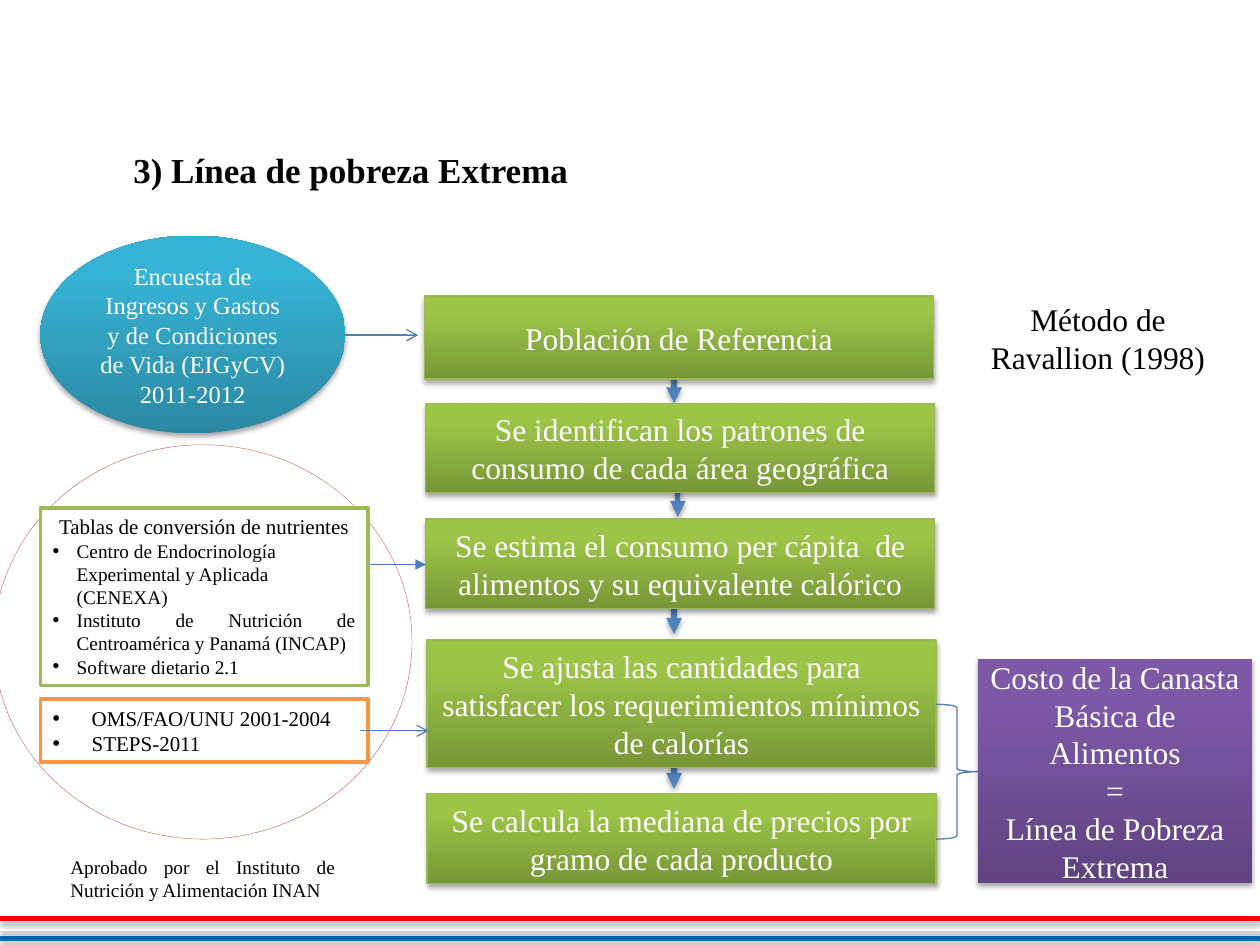
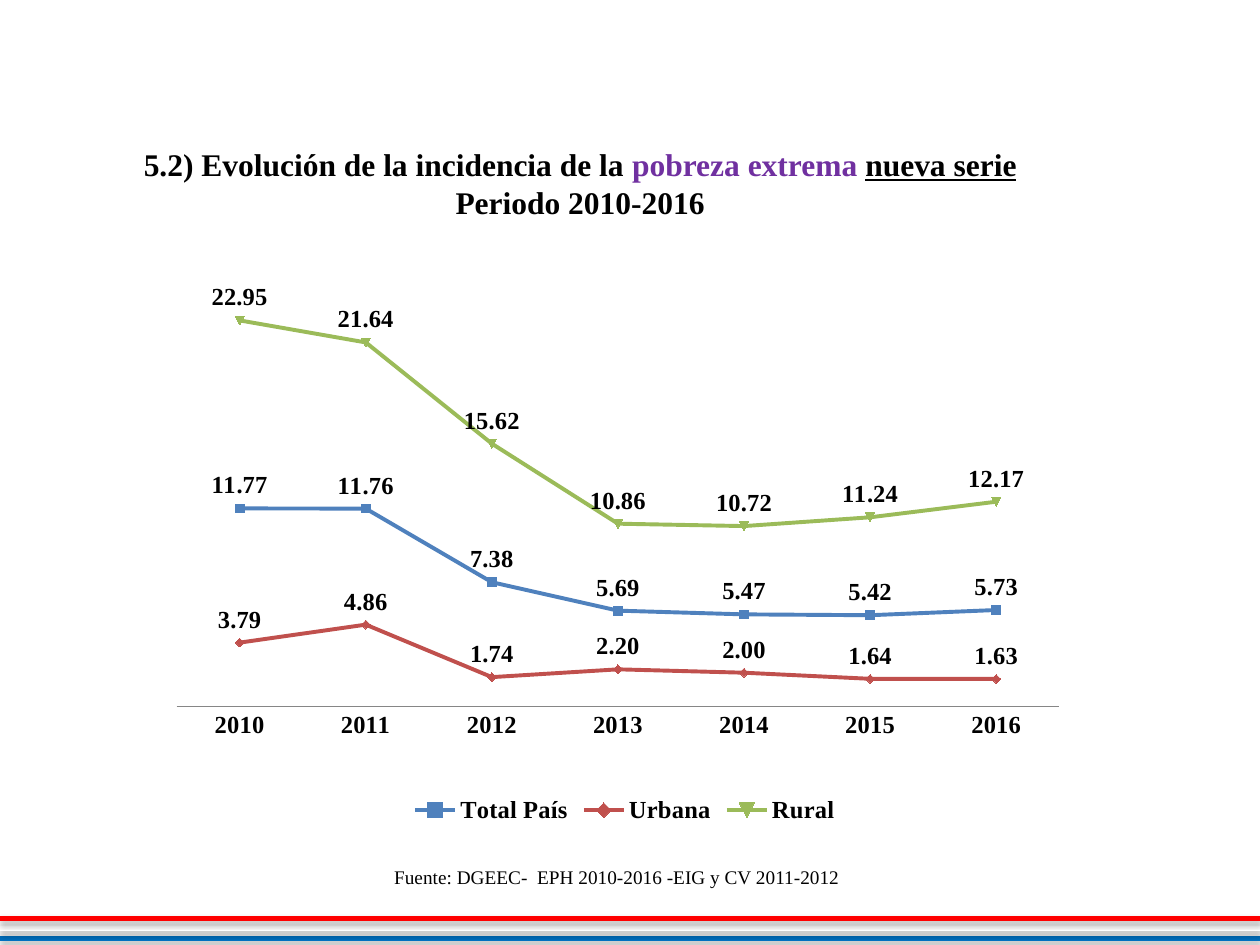
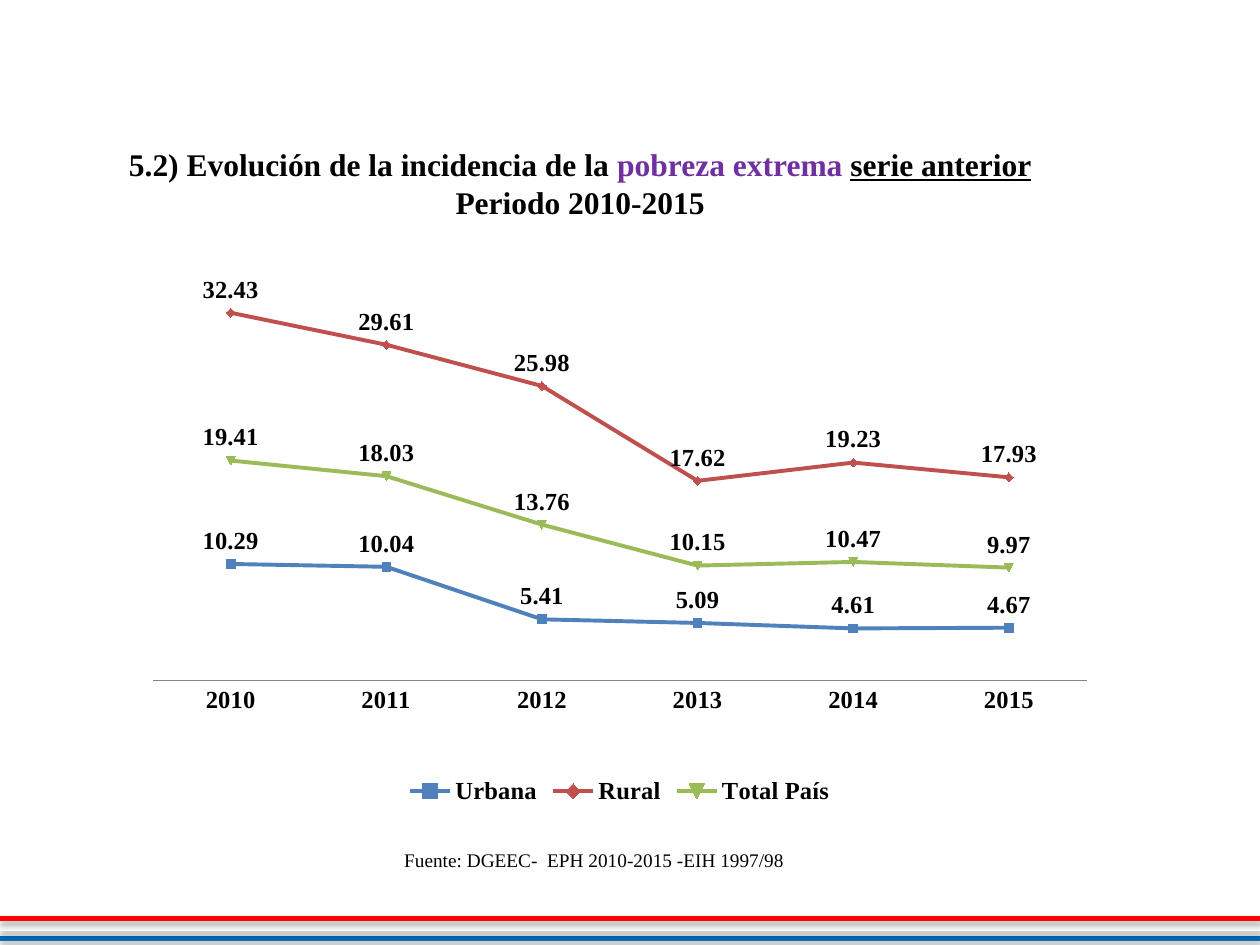
from dataclasses import dataclass
from typing import Optional, Sequence

from lxml import etree
from pptx import Presentation
from pptx.chart.data import CategoryChartData
from pptx.dml.color import RGBColor
from pptx.enum.chart import XL_CHART_TYPE as ChartType
from pptx.enum.chart import XL_LABEL_POSITION as LabelPosition
from pptx.enum.chart import XL_LEGEND_POSITION as LegendPosition
from pptx.enum.chart import XL_TICK_MARK as TickMark
from pptx.enum.dml import MSO_LINE as Dash
from pptx.enum.shapes import MSO_CONNECTOR as Connector
from pptx.enum.shapes import MSO_SHAPE as Preset
from pptx.enum.text import MSO_ANCHOR as Anchor
from pptx.enum.text import PP_ALIGN as Align
from pptx.oxml import parse_xml
from pptx.oxml.ns import nsdecls, qn
from pptx.util import Inches, Pt

# Shared look
FONT = "Times New Roman"
BLACK = RGBColor(0x00, 0x00, 0x00)
WHITE = RGBColor(0xFF, 0xFF, 0xFF)
RED = RGBColor(0xFF, 0x00, 0x00)
FLAG_BLUE = RGBColor(0x00, 0x70, 0xC0)
BLUE = RGBColor(0x4F, 0x81, 0xBD)
ARROW_BLUE = RGBColor(0x4B, 0x7E, 0xBC)
BRICK = RGBColor(0xC0, 0x50, 0x4D)
GREEN = RGBColor(0x9B, 0xBB, 0x59)
GREEN_EDGE = RGBColor(0x98, 0xB9, 0x55)
ORANGE = RGBColor(0xF7, 0x96, 0x46)
PURPLE = RGBColor(0x70, 0x30, 0xA0)
AXIS_GRAY = RGBColor(0x86, 0x86, 0x86)

# Gradients run from the bottom colour to the top colour
GREEN_FADE = (RGBColor(0x77, 0x97, 0x37), RGBColor(0x9C, 0xC5, 0x47))
TEAL_FADE = (RGBColor(0x2A, 0x88, 0xA2), RGBColor(0x36, 0xB2, 0xD4))
PURPLE_FADE = (RGBColor(0x5F, 0x44, 0x80), RGBColor(0x7C, 0x58, 0xA7))

SERIES_COLORS = (BLUE, BRICK, GREEN)


@dataclass(frozen=True)
class Box:
    left: float
    top: float
    width: float
    height: float

    def lengths(self) -> tuple:
        return tuple(Inches(v) for v in (self.left, self.top, self.width, self.height))


@dataclass(frozen=True)
class Run:
    text: str
    color: Optional[RGBColor] = None
    underline: bool = False


@dataclass(frozen=True)
class Line:
    runs: Sequence[Run]
    size: float
    align: Align = Align.LEFT
    indent: float = 0


@dataclass(frozen=True)
class Arrow:
    start: tuple
    end: tuple
    head: str


@dataclass(frozen=True)
class TrendSlide:
    series_name: str
    period: str
    title_box: Box
    source: str
    source_box: Box
    chart_box: Box
    plot_area: tuple
    maximum: float
    years: range
    series: dict


# Text
def add_bullet(paragraph, indent: float) -> None:
    properties = paragraph._p.get_or_add_pPr()
    properties.set("marL", str(Inches(indent)))
    properties.set("indent", str(-Inches(indent)))
    font = etree.SubElement(properties, qn("a:buFont"))
    font.set("typeface", "Arial")
    etree.SubElement(properties, qn("a:buChar")).set("char", "•")


def line(text: str, size: float, align: Align = Align.LEFT, indent: float = 0) -> Line:
    return Line((Run(text),), size, align, indent)


def write_text(shape, lines: Sequence[Line], color: RGBColor = BLACK,
               bold: bool = False, anchor: Anchor = Anchor.TOP) -> None:
    frame = shape.text_frame
    frame.word_wrap = True
    frame.vertical_anchor = anchor
    for index, item in enumerate(lines):
        paragraph = frame.add_paragraph() if index else frame.paragraphs[0]
        paragraph.alignment = item.align
        if item.indent:
            add_bullet(paragraph, item.indent)
        for part in item.runs:
            run = paragraph.add_run()
            run.text = part.text
            run.font.name = FONT
            run.font.size = Pt(item.size)
            run.font.bold = bold
            run.font.underline = part.underline
            run.font.color.rgb = part.color or color


def add_text(slide, box: Box, lines: Sequence[Line], bold: bool = False) -> None:
    write_text(slide.shapes.add_textbox(*box.lengths()), lines, bold=bold)


# Shapes and lines
def set_effects(shape, shadow: bool) -> None:
    properties = shape._element.spPr
    for old in properties.findall(qn("a:effectLst")):
        properties.remove(old)
    outer = (f'<a:outerShdw blurRad="{Pt(3.1)}" dist="{Pt(1.8)}" dir="5400000" '
             'rotWithShape="0"><a:srgbClr val="000000"><a:alpha val="35000"/>'
             '</a:srgbClr></a:outerShdw>') if shadow else ""
    properties.append(parse_xml(f'<a:effectLst {nsdecls("a")}>{outer}</a:effectLst>'))


def add_shape(slide, preset: Preset, box: Box, fill: Optional[RGBColor] = None,
              fade: Optional[tuple] = None, edge: Optional[RGBColor] = None,
              edge_width: float = 0.75, shadow: bool = False):
    shape = slide.shapes.add_shape(preset, *box.lengths())
    if fade:
        shape.fill.gradient()
        shape.fill.gradient_angle = 90
        for stop, color, position in zip(shape.fill.gradient_stops, fade, (0, 0.8)):
            stop.color.rgb = color
            stop.position = position
    elif fill is not None:
        shape.fill.solid()
        shape.fill.fore_color.rgb = fill
    else:
        shape.fill.background()
    if edge is not None:
        shape.line.color.rgb = edge
        shape.line.width = Pt(edge_width)
    else:
        shape.line.fill.background()
    set_effects(shape, shadow)
    return shape


def add_line(slide, start: tuple, end: tuple, color: RGBColor, width: float,
             head: str = "", shadow: bool = False) -> None:
    connector = slide.shapes.add_connector(
        Connector.STRAIGHT, *(Inches(v) for v in (*start, *end)))
    connector.line.color.rgb = color
    connector.line.width = Pt(width)
    if head:
        outline = connector.line._get_or_add_ln()
        etree.SubElement(outline, qn("a:tailEnd")).set("type", head)
    set_effects(connector, shadow)


def new_slide(presentation):
    """Blank slide with the flag-coloured band at the bottom."""
    slide = presentation.slides.add_slide(presentation.slide_layouts[6])
    for index, color in enumerate((FLAG_BLUE, WHITE, RED)):
        y = 7.45 - 0.08 * index
        add_line(slide, (0, y), (10, y), color, 3, shadow=True)
    return slide


# Slide 1: extreme poverty line
STEPS = (
    (Box(3.37, 2.35, 4.04, 0.66), "Población de Referencia"),
    (Box(3.38, 3.2, 4.04, 0.71),
     "Se identifican los patrones de consumo de cada área geográfica"),
    (Box(3.38, 4.12, 4.04, 0.71),
     "Se estima el consumo per cápita  de alimentos y su equivalente calórico"),
    (Box(3.39, 5.08, 4.04, 1.01),
     "Se ajusta las cantidades para satisfacer los requerimientos mínimos de calorías"),
    (Box(3.39, 6.3, 4.04, 0.71),
     "Se calcula la mediana de precios por gramo de cada producto"),
)
STEP_ARROWS = ((5.35, 2.91), (5.38, 3.81), (5.35, 4.74), (5.35, 5.97))
STEP_ARROW_LENGTH = 0.29
INPUT_ARROWS = (
    Arrow((2.74, 2.66), (3.32, 2.66), "arrow"),
    Arrow((2.86, 5.8), (3.4, 5.8), "arrow"),
)
NUTRIENT_ARROW = Arrow((2.53, 4.48), (3.38, 4.48), "triangle")


def add_input_arrow(slide, arrow: Arrow) -> None:
    add_line(slide, arrow.start, arrow.end, ARROW_BLUE, 0.75, arrow.head)


def add_method_slide(presentation) -> None:
    slide = new_slide(presentation)
    circle = add_shape(slide, Preset.OVAL, Box(-0.05, 3.53, 3.32, 3.13),
                       fill=WHITE, edge=BRICK, edge_width=0.25)
    circle.line.dash_style = Dash.SQUARE_DOT
    add_text(slide, Box(0.96, 1.13, 8.74, 0.44),
             [line("3) Línea de pobreza Extrema", 20)], bold=True)

    # Chain of steps
    for x, y in STEP_ARROWS:
        add_line(slide, (x, y), (x, y + STEP_ARROW_LENGTH), BLUE, 3,
                 "triangle", shadow=True)
    for box, text in STEPS:
        step = add_shape(slide, Preset.RECTANGLE, box, fade=GREEN_FADE,
                         edge=GREEN_EDGE, shadow=True)
        write_text(step, [line(text, 18, Align.CENTER)], WHITE, anchor=Anchor.MIDDLE)

    # Data sources
    survey = add_shape(slide, Preset.OVAL, Box(0.32, 1.87, 2.42, 1.57),
                       fade=TEAL_FADE, shadow=True)
    write_text(survey, [line("Encuesta de Ingresos y Gastos y de Condiciones de Vida "
                             "(EIGyCV) 2011-2012", 14, Align.CENTER)],
               WHITE, anchor=Anchor.MIDDLE)
    add_input_arrow(slide, NUTRIENT_ARROW)
    nutrients = add_shape(slide, Preset.RECTANGLE, Box(0.32, 4.03, 2.6, 1.41),
                          fill=WHITE, edge=GREEN, edge_width=2)
    write_text(nutrients, [
        line("Tablas de conversión de nutrientes", 12, Align.CENTER),
        line("Centro de Endocrinología Experimental y Aplicada (CENEXA)", 11, indent=0.19),
        line("Instituto de Nutrición de Centroamérica y Panamá (INCAP)", 11,
             Align.JUSTIFY, 0.19),
        line("Software dietario 2.1", 11, Align.JUSTIFY, 0.19),
    ])
    requirements = add_shape(slide, Preset.RECTANGLE, Box(0.32, 5.55, 2.6, 0.5),
                             fill=WHITE, edge=ORANGE, edge_width=2)
    write_text(requirements, [line(text, 12, Align.JUSTIFY, 0.31)
                              for text in ("OMS/FAO/UNU 2001-2004", "STEPS-2011")])
    for arrow in INPUT_ARROWS:
        add_input_arrow(slide, arrow)
    add_text(slide, Box(0.46, 6.74, 2.3, 0.47),
             [line("Aprobado por el Instituto de Nutrición y Alimentación INAN",
                   11, Align.JUSTIFY)])

    # Method and result
    add_text(slide, Box(7.76, 2.33, 1.91, 0.71),
             [line("Método de Ravallion (1998)", 18, Align.CENTER)])
    add_shape(slide, Preset.RIGHT_BRACE, Box(7.43, 5.59, 0.33, 1.07), edge=ARROW_BLUE)
    result = add_shape(slide, Preset.RECTANGLE, Box(7.76, 5.23, 2.18, 1.78),
                       fade=PURPLE_FADE, shadow=True)
    write_text(result, [line(text, 18, Align.CENTER) for text in (
        "Costo de la Canasta Básica de Alimentos", "=", "Línea de Pobreza Extrema")],
        WHITE, anchor=Anchor.MIDDLE)


# Slides 2 and 3: poverty trends
TRENDS = (
    TrendSlide(
        "nueva serie", "2010-2016", Box(0.59, 1.1, 8.03, 1.35),
        "Fuente: DGEEC-  EPH 2010-2016 -EIG y CV 2011-2012", Box(3.03, 6.82, 5.1, 0.29),
        Box(1.3, 2.25, 7.32, 4.33), (0.014, 0.003, 0.957, 0.772), 25, range(2010, 2017),
        {"Total País": (11.77, 11.76, 7.38, 5.69, 5.47, 5.42, 5.73),
         "Urbana": (3.79, 4.86, 1.74, 2.2, 2, 1.64, 1.63),
         "Rural": (22.95, 21.64, 15.62, 10.86, 10.72, 11.24, 12.17)}),
    TrendSlide(
        "serie anterior", "2010-2015", Box(0.59, 1.1, 8.03, 0.71),
        "Fuente: DGEEC-  EPH 2010-2015 -EIH 1997/98", Box(3.11, 6.68, 5.1, 0.29),
        Box(1.06, 2.1, 7.72, 4.33), (0.02, 0.035, 0.96, 0.728), 35, range(2010, 2016),
        {"Urbana": (10.29, 10.04, 5.41, 5.09, 4.61, 4.67),
         "Rural": (32.43, 29.61, 25.98, 17.62, 19.23, 17.93),
         "Total País": (19.41, 18.03, 13.76, 10.15, 10.47, 9.97)}),
)


def place_plot(chart, plot_area: tuple) -> None:
    area = chart._chartSpace.chart.plotArea
    for old in area.findall(qn("c:layout")):
        area.remove(old)
    sizes = "".join(f'<c:{name} val="{value}"/>'
                    for name, value in zip("xywh", plot_area))
    area.insert(0, parse_xml(
        f'<c:layout {nsdecls("c")}><c:manualLayout><c:layoutTarget val="inner"/>'
        f'<c:xMode val="edge"/><c:yMode val="edge"/>{sizes}'
        '</c:manualLayout></c:layout>'))


def add_trend_chart(slide, trend: TrendSlide) -> None:
    data = CategoryChartData(number_format="0.00")
    data.categories = [str(year) for year in trend.years]
    for name, values in trend.series.items():
        data.add_series(name, values)
    chart = slide.shapes.add_chart(
        ChartType.LINE_MARKERS, *trend.chart_box.lengths(), data).chart
    chart.has_title = False
    chart.font.name = FONT
    chart.font.size = Pt(14)
    chart.font.bold = True
    chart.font.color.rgb = BLACK
    chart.has_legend = True
    chart.legend.position = LegendPosition.BOTTOM
    chart.legend.include_in_layout = False
    place_plot(chart, trend.plot_area)

    # Axes
    chart.category_axis.major_tick_mark = TickMark.NONE
    chart.category_axis.format.line.color.rgb = AXIS_GRAY
    chart.value_axis.visible = False
    chart.value_axis.has_major_gridlines = False
    chart.value_axis.minimum_scale = 0
    chart.value_axis.maximum_scale = trend.maximum

    # Series and labels
    plot = chart.plots[0]
    plot.vary_by_categories = False
    plot.has_data_labels = True
    for series, color in zip(plot.series, SERIES_COLORS):
        series.smooth = False
        series.format.line.color.rgb = color
        series.format.line.width = Pt(2.25)
        series.marker.size = 5
        series.marker.format.fill.solid()
        series.marker.format.fill.fore_color.rgb = color
        series.marker.format.line.color.rgb = color
        labels = series.data_labels
        labels.show_value = True
        labels.position = LabelPosition.ABOVE
        labels.number_format = "0.00"
        labels.number_format_is_linked = False


def add_trend_slide(presentation, trend: TrendSlide) -> None:
    slide = new_slide(presentation)
    heading = (Run("5.2) Evolución de la incidencia de la "),
               Run("pobreza extrema ", PURPLE),
               Run(trend.series_name, underline=True))
    add_text(slide, trend.title_box,
             [Line(heading, 18, Align.CENTER),
              line(f"Periodo {trend.period}", 18, Align.CENTER)], bold=True)
    add_text(slide, trend.source_box, [line(trend.source, 11)])
    add_trend_chart(slide, trend)


def main() -> None:
    presentation = Presentation()
    presentation.slide_width = Inches(10)
    presentation.slide_height = Inches(7.5)
    add_method_slide(presentation)
    for trend in TRENDS:
        add_trend_slide(presentation, trend)
    presentation.save("out.pptx")


if __name__ == "__main__":
    main()
